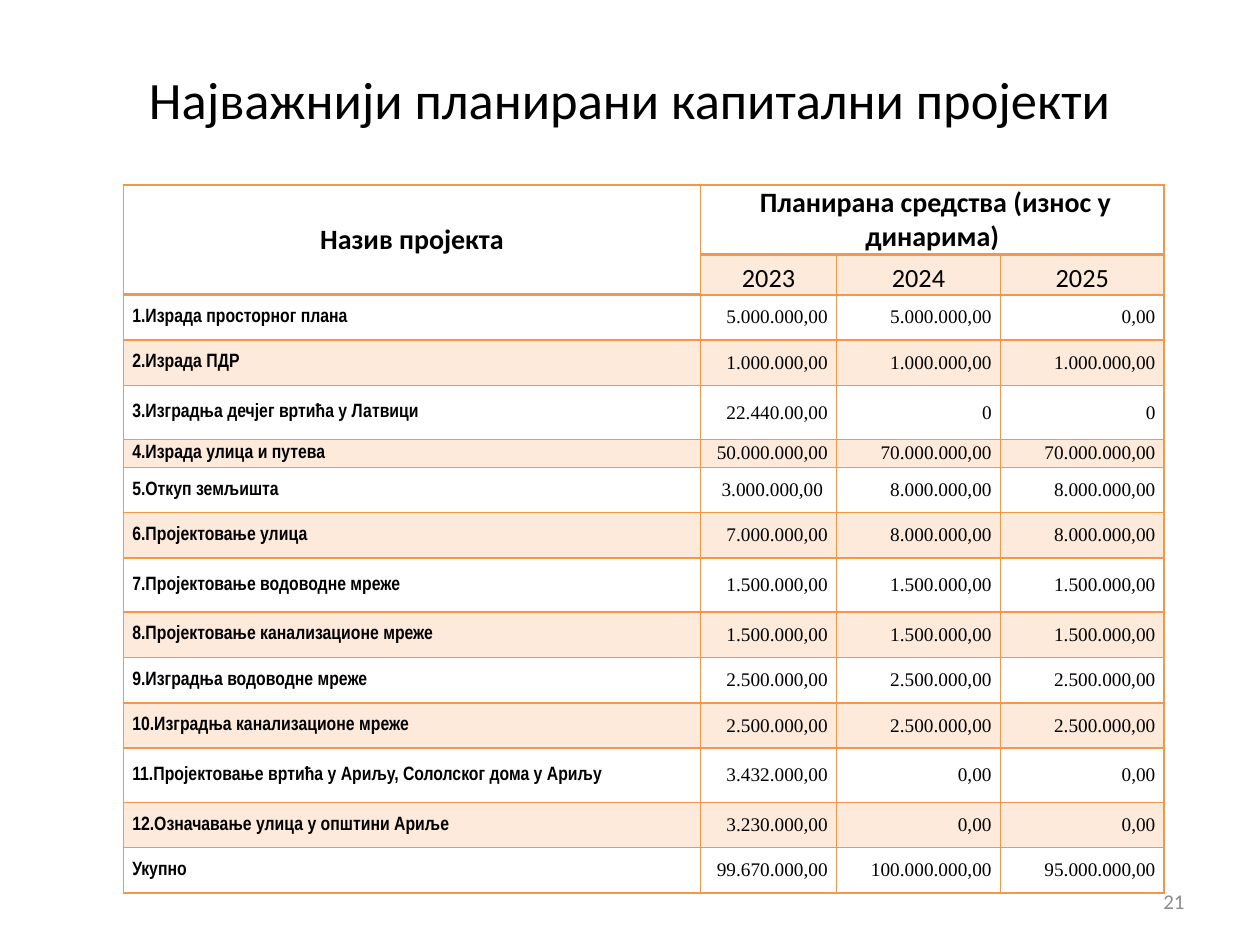
import pptx
import pptx.util
from lxml import etree
from pptx.dml.color import RGBColor
from pptx.enum.text import MSO_ANCHOR, PP_ALIGN
from pptx.oxml.ns import qn
from pptx.util import Inches, Pt

TITLE = "Најважнији планирани капитални пројекти"
PAGE_NUMBER = "21"
NAME_HEADER = "Назив пројекта"
FUNDS_HEADER = " Планирана средства (износ у динарима)"
YEARS = ("2023", "2024", "2025")
# name, amounts for each year, row height
PROJECTS = [
    ("1.Израда просторног плана", "5.000.000,00", "5.000.000,00", "0,00", 0.36),
    ("2.Израда ПДР", "1.000.000,00", "1.000.000,00", "1.000.000,00", 0.36),
    ("3.Изградња дечјег вртића у Латвици", "22.440.00,00", "0", "0", 0.43),
    ("4.Израда улица и путева", "50.000.000,00", "70.000.000,00", "70.000.000,00", 0.22),
    ("5.Откуп земљишта", "3.000.000,00 ", "8.000.000,00", "8.000.000,00", 0.36),
    ("6.Пројектовање улица", "7.000.000,00", "8.000.000,00", "8.000.000,00", 0.36),
    ("7.Пројектовање водоводне мреже", "1.500.000,00", "1.500.000,00", "1.500.000,00", 0.43),
    ("8.Пројектовање канализационе мреже", "1.500.000,00", "1.500.000,00", "1.500.000,00", 0.36),
    ("9.Изградња водоводне мреже", "2.500.000,00", "2.500.000,00", "2.500.000,00", 0.36),
    ("10.Изградња канализационе мреже", "2.500.000,00", "2.500.000,00", "2.500.000,00", 0.36),
    ("11.Пројектовање вртића у Ариљу, Сололског дома у Ариљу", "3.432.000,00", "0,00", "0,00", 0.43),
    ("12.Означавање улица у општини Ариље", "3.230.000,00", "0,00", "0,00", 0.36),
    ("Укупно", "99.670.000,00", "100.000.000,00", "95.000.000,00", 0.36),
]
COLUMN_WIDTHS = (4.58, 1.08, 1.3, 1.3)
HEADER_HEIGHTS = (0.55, 0.32)
ORANGE = "F79646"
HEADER = {"name": "Calibri", "size": Pt(16), "bold": True}
YEAR = {"name": "Calibri", "size": Pt(15), "bold": False}
PROJECT = {"name": "Arial Narrow", "size": Pt(11), "bold": True}
AMOUNT = {"name": "Times New Roman", "size": Pt(11), "bold": False}
CELL_MARGINS = {"margin_left": Inches(0.07), "margin_right": Inches(0.07),
                "margin_top": 0, "margin_bottom": 0}


def set_all(target, values):
    for name, value in values.items():
        setattr(target, name, value)


def color(hex_value):
    return RGBColor.from_string(hex_value)


def write(frame, text, font, align, hex_color="000000"):
    paragraph = frame.paragraphs[0]
    paragraph.alignment = align
    run = paragraph.add_run()
    run.text = text
    set_all(run.font, font)
    run.font.color.rgb = color(hex_color)


def set_borders(cell, bottom_width):
    properties = cell._tc.get_or_add_tcPr()
    for side, width in (("L", 1), ("R", 1), ("T", 1), ("B", bottom_width)):
        line = etree.SubElement(properties, qn(f"a:ln{side}"), w=str(Pt(width)))
        fill = etree.SubElement(line, qn("a:solidFill"))
        etree.SubElement(fill, qn("a:srgbClr"), val=ORANGE)


def tint(cell):
    """Fill the cell with orange at 20 % opacity."""
    cell.fill.solid()
    cell.fill.fore_color.rgb = color(ORANGE)
    fill_color = cell._tc.tcPr.find(qn("a:solidFill"))[0]
    etree.SubElement(fill_color, qn("a:alpha"), val="20000")


def add_project_table(slide):
    heights = [*HEADER_HEIGHTS, *(project[-1] for project in PROJECTS)]
    table = slide.shapes.add_table(
        len(heights), len(COLUMN_WIDTHS), Inches(0.98), Inches(1.47),
        Inches(sum(COLUMN_WIDTHS)), Inches(sum(heights))).table
    set_all(table, {"first_row": False, "horz_banding": False})
    for column, width in zip(table.columns, COLUMN_WIDTHS):
        column.width = Inches(width)
    for row, height in zip(table.rows, heights):
        row.height = Inches(height)

    for r, row in enumerate(table.rows):
        for c, cell in enumerate(row.cells):
            set_all(cell, CELL_MARGINS)
            cell.vertical_anchor = MSO_ANCHOR.MIDDLE
            set_borders(cell, 2 if r == 0 or (r, c) == (1, 0) else 1)
            if r % 2 and (r, c) != (1, 0):
                tint(cell)
            else:
                cell.fill.background()

    table.cell(0, 0).merge(table.cell(1, 0))
    table.cell(0, 1).merge(table.cell(0, 3))
    write(table.cell(0, 0).text_frame, NAME_HEADER, HEADER, PP_ALIGN.CENTER)
    write(table.cell(0, 1).text_frame, FUNDS_HEADER, HEADER, PP_ALIGN.CENTER)
    table.cell(0, 1).vertical_anchor = MSO_ANCHOR.BOTTOM
    for c, year in enumerate(YEARS, 1):
        cell = table.cell(1, c)
        cell.vertical_anchor = MSO_ANCHOR.BOTTOM
        write(cell.text_frame, year, YEAR, PP_ALIGN.CENTER)
    for r, (name, *amounts, _) in enumerate(PROJECTS, len(HEADER_HEIGHTS)):
        write(table.cell(r, 0).text_frame, name, PROJECT, PP_ALIGN.LEFT)
        for c, amount in enumerate(amounts, 1):
            write(table.cell(r, c).text_frame, amount, AMOUNT, PP_ALIGN.RIGHT)


def main():
    presentation = pptx.Presentation()
    set_all(presentation, {"slide_width": Inches(10), "slide_height": Inches(7.5)})
    slide = presentation.slides.add_slide(presentation.slide_layouts[5])

    add_project_table(slide)

    number = slide.shapes.add_textbox(Inches(7.17), Inches(6.95), Inches(2.33), Inches(0.4))
    set_all(number.text_frame, {"word_wrap": True, "vertical_anchor": MSO_ANCHOR.MIDDLE})
    write(number.text_frame, PAGE_NUMBER, {"name": "Calibri", "size": Pt(12)},
          PP_ALIGN.RIGHT, "8C8C8C")

    title = slide.shapes.title
    set_all(title, {"left": Inches(0.5), "top": Inches(0.3),
                    "width": Inches(9), "height": Inches(0.96)})
    title.text_frame.vertical_anchor = MSO_ANCHOR.MIDDLE
    write(title.text_frame, TITLE, {"name": "Calibri", "size": Pt(30)}, PP_ALIGN.CENTER)

    presentation.save("out.pptx")


if __name__ == "__main__":
    main()
